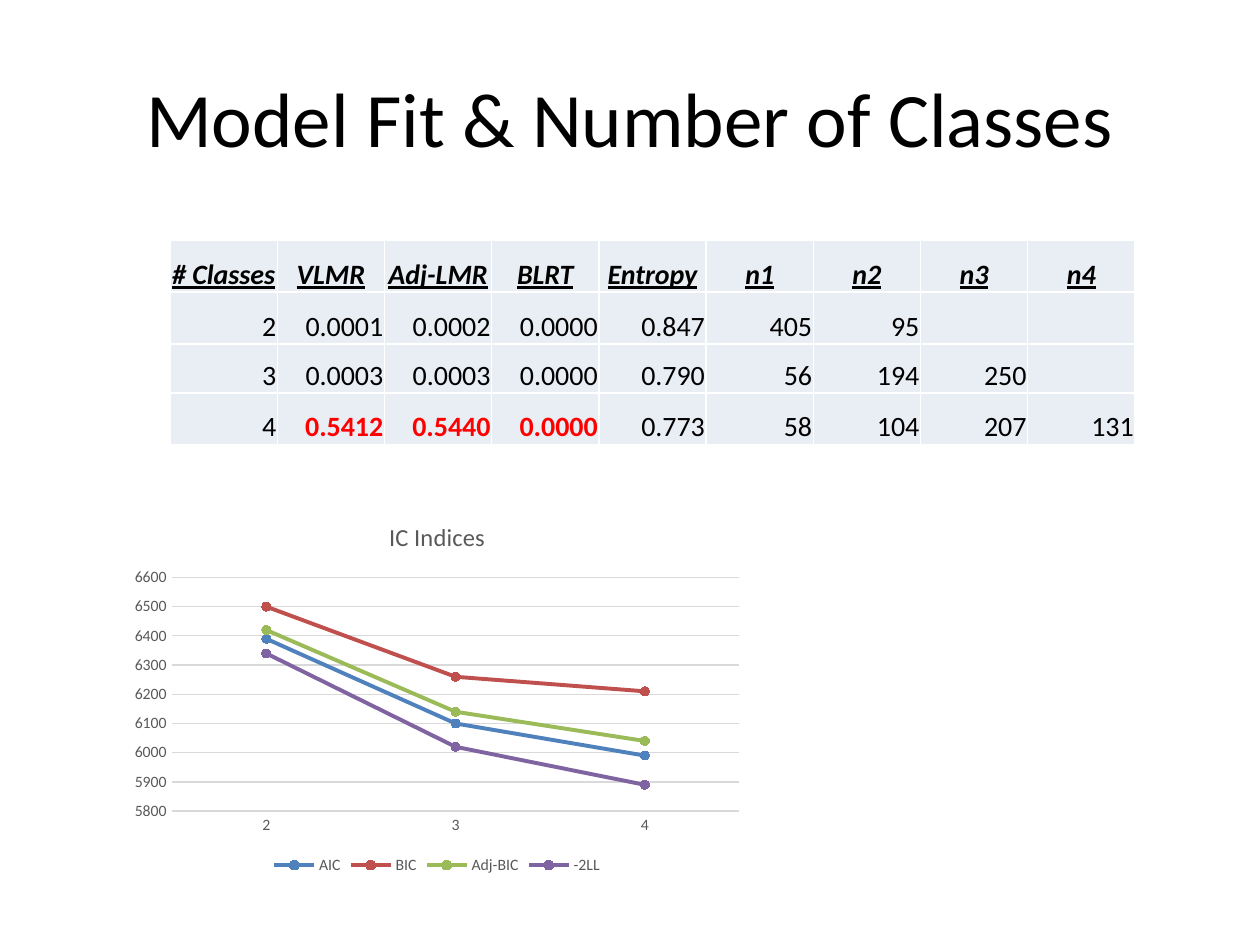
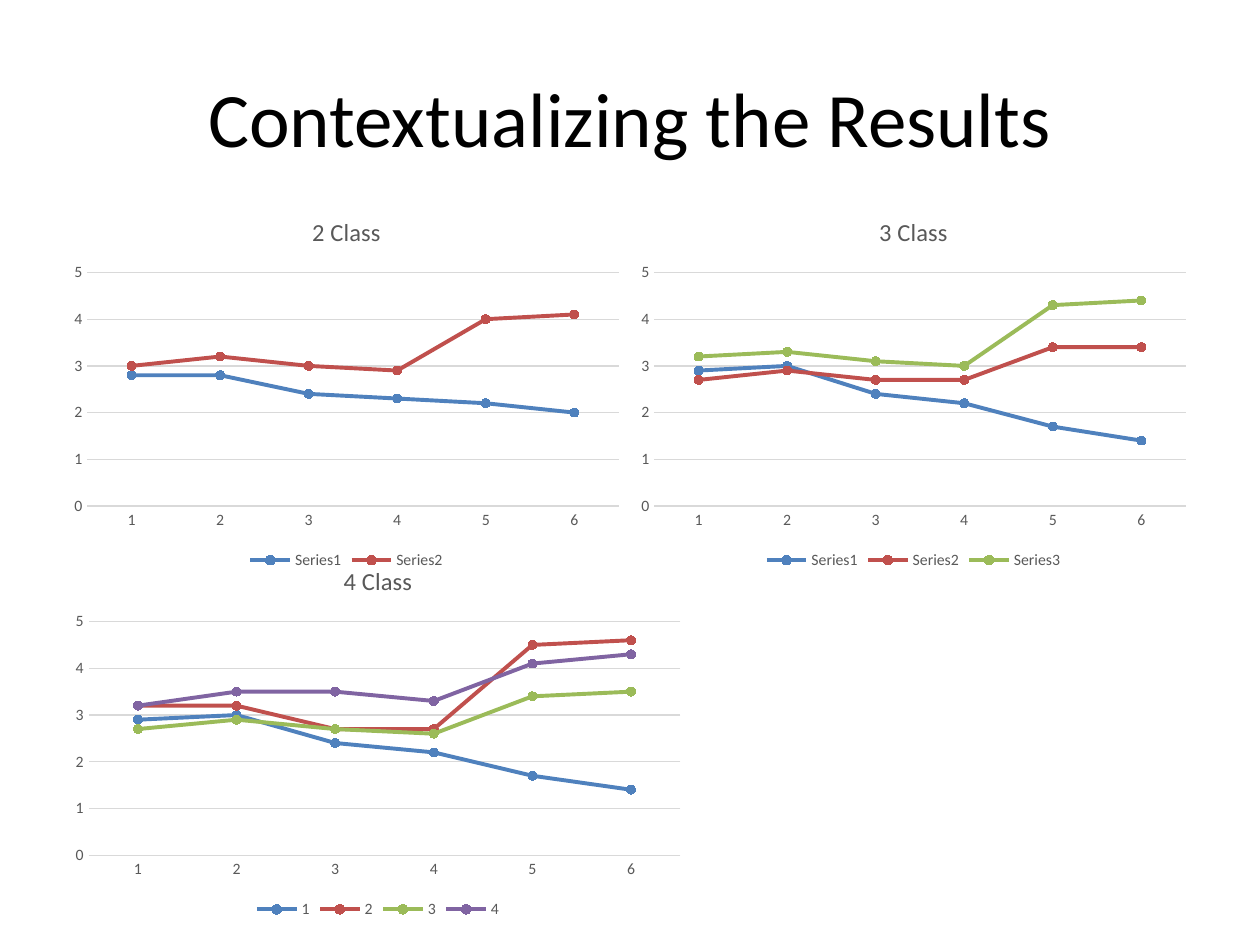
from dataclasses import dataclass

from lxml import etree
from pptx import Presentation
from pptx.chart.data import CategoryChartData
from pptx.dml.color import RGBColor
from pptx.enum.chart import XL_CHART_TYPE as ChartType
from pptx.enum.chart import XL_LEGEND_POSITION as LegendPosition
from pptx.enum.chart import XL_MARKER_STYLE as MarkerStyle
from pptx.enum.chart import XL_TICK_MARK as TickMark
from pptx.enum.text import MSO_ANCHOR as Anchor
from pptx.enum.text import PP_ALIGN as Align
from pptx.oxml import parse_xml
from pptx.oxml.ns import nsdecls
from pptx.util import Pt


@dataclass(frozen=True)
class Theme:
    font: str = "Calibri"
    ink: str = "000000"
    alert: str = "FF0000"
    cell: str = "E9EDF4"
    chart_text: str = "595959"
    grid: str = "D9D9D9"
    series: tuple = ("4F81BD", "C0504D", "9BBB59", "8064A2")
    title_size: int = 44
    table_size: int = 16
    chart_title_size: int = 14
    chart_size: int = 9


THEME = Theme()

FIT_HEADER = ["# Classes", "VLMR", "Adj-LMR", "BLRT", "Entropy", "n1", "n2", "n3", "n4"]
FIT_ROWS = [
    ["2", "0.0001", "0.0002", "0.0000", "0.847", "405", "95", "", ""],
    ["3", "0.0003", "0.0003", "0.0000", "0.790", "56", "194", "250", ""],
    ["4", "0.5412", "0.5440", "0.0000", "0.773", "58", "104", "207", "131"],
]
ALERT_CELLS = {(3, 1), (3, 2), (3, 3)}
FIT_BOX = (97.2, 137.5, 551.5, 116)
FIT_ROW_HEIGHTS = (29.5, 29.5, 28, 29.5)

ITEMS = ["1", "2", "3", "4", "5", "6"]
MEAN_SCALE = (0, 5, 1)

IC_CHART = {
    "title": "IC Indices", "box": (69.8, 286.6, 360, 216),
    "categories": ["2", "3", "4"], "scale": (5800, 6600, 100),
    "series": {
        "AIC": [6390, 6100, 5990],
        "BIC": [6500, 6260, 6210],
        "Adj-BIC": [6420, 6140, 6040],
        "-2LL": [6340, 6020, 5890],
    },
}

CLASS_CHARTS = [
    {
        "title": "2 Class", "box": (36, 112.3, 324, 216),
        "categories": ITEMS, "scale": MEAN_SCALE,
        "series": {
            "Series1": [2.8, 2.8, 2.4, 2.3, 2.2, 2],
            "Series2": [3, 3.2, 3, 2.9, 4, 4.1],
        },
    },
    {
        "title": "3 Class", "box": (360, 112.3, 324, 216),
        "categories": ITEMS, "scale": MEAN_SCALE,
        "series": {
            "Series1": [2.9, 3, 2.4, 2.2, 1.7, 1.4],
            "Series2": [2.7, 2.9, 2.7, 2.7, 3.4, 3.4],
            "Series3": [3.2, 3.3, 3.1, 3, 4.3, 4.4],
        },
    },
    {
        "title": "4 Class", "box": (36, 311.8, 360, 216),
        "categories": ITEMS, "scale": MEAN_SCALE,
        "series": {
            "1": [2.9, 3, 2.4, 2.2, 1.7, 1.4],
            "2": [3.2, 3.2, 2.7, 2.7, 4.5, 4.6],
            "3": [2.7, 2.9, 2.7, 2.6, 3.4, 3.5],
            "4": [3.2, 3.5, 3.5, 3.3, 4.1, 4.3],
        },
    },
]


def rgb(value):
    return RGBColor.from_string(value)


def style_font(font, size, color, bold=False):
    font.name = THEME.font
    font.size = Pt(size)
    font.bold = bold
    font.color.rgb = rgb(color)


def add_titled_slide(deck, text):
    page = deck.slides.add_slide(deck.slide_layouts[5])
    title = page.shapes.title
    title.left, title.top, title.width, title.height = map(Pt, (36, 21.6, 648, 90))
    frame = title.text_frame
    frame.vertical_anchor = Anchor.MIDDLE
    para = frame.paragraphs[0]
    para.alignment = Align.CENTER
    span = para.add_run()
    span.text = text
    style_font(span.font, THEME.title_size, THEME.ink)
    return page


def fill_cell(cell, text, is_header, is_alert):
    cell.fill.solid()
    cell.fill.fore_color.rgb = rgb(THEME.cell)
    cell.vertical_anchor = Anchor.BOTTOM
    cell.margin_left = cell.margin_right = cell.margin_top = Pt(0.7)
    cell.margin_bottom = Pt(0)
    if not text:
        return
    para = cell.text_frame.paragraphs[0]
    para.alignment = Align.CENTER if is_header else Align.RIGHT
    span = para.add_run()
    span.text = text
    color = THEME.alert if is_alert else THEME.ink
    style_font(span.font, THEME.table_size, color, is_header or is_alert)
    span.font.italic = span.font.underline = is_header


def add_fit_table(page):
    rows = [FIT_HEADER] + FIT_ROWS
    table = page.shapes.add_table(len(rows), len(FIT_HEADER), *map(Pt, FIT_BOX)).table
    table.first_row = table.horz_banding = False
    for column in table.columns:
        column.width = Pt(FIT_BOX[2] / len(FIT_HEADER))
    for r, (texts, height) in enumerate(zip(rows, FIT_ROW_HEIGHTS)):
        table.rows[r].height = Pt(height)
        for c, text in enumerate(texts):
            fill_cell(table.cell(r, c), text, r == 0, (r, c) in ALERT_CELLS)


def clear_chart_background(chart):
    """Let charts that overlap show through one another."""
    area = parse_xml(f'<c:spPr {nsdecls("c", "a")}><a:noFill/></c:spPr>')
    etree.SubElement(etree.SubElement(area, "{%s}ln" % area.nsmap["a"]),
                     "{%s}noFill" % area.nsmap["a"])
    chart.element.find("{*}chart").addnext(area)


def style_axes(chart, scale):
    for axis in (chart.category_axis, chart.value_axis):
        axis.major_tick_mark = axis.minor_tick_mark = TickMark.NONE
        style_font(axis.tick_labels.font, THEME.chart_size, THEME.chart_text)
    values = chart.value_axis
    values.minimum_scale, values.maximum_scale, values.major_unit = scale
    values.tick_labels.number_format = "0"
    values.tick_labels.number_format_is_linked = False
    values.format.line.fill.background()
    values.has_major_gridlines = True
    for line in (values.major_gridlines.format.line, chart.category_axis.format.line):
        line.color.rgb = rgb(THEME.grid)
        line.width = Pt(0.75)


def style_series(series, color):
    series.smooth = False
    series.format.line.color.rgb = color
    series.format.line.width = Pt(2.25)
    marker = series.marker
    marker.style = MarkerStyle.CIRCLE
    marker.size = 5
    marker.format.fill.solid()
    marker.format.fill.fore_color.rgb = color
    marker.format.line.color.rgb = color


def add_line_chart(page, content):
    data = CategoryChartData()
    data.categories = content["categories"]
    for name, values in content["series"].items():
        data.add_series(name, values)
    box = map(Pt, content["box"])
    chart = page.shapes.add_chart(ChartType.LINE_MARKERS, *box, data).chart
    style_font(chart.font, 10, THEME.ink)
    clear_chart_background(chart)

    chart.has_title = True
    span = chart.chart_title.text_frame.paragraphs[0].add_run()
    span.text = content["title"]
    style_font(span.font, THEME.chart_title_size, THEME.chart_text)
    chart.chart_title.include_in_layout = False

    chart.has_legend = True
    chart.legend.position = LegendPosition.BOTTOM
    chart.legend.include_in_layout = False
    style_font(chart.legend.font, THEME.chart_size, THEME.chart_text)

    style_axes(chart, content["scale"])
    chart.plots[0].vary_by_categories = False
    for series, color in zip(chart.plots[0].series, THEME.series):
        style_series(series, rgb(color))


def main():
    deck = Presentation()
    deck.slide_width, deck.slide_height = Pt(720), Pt(540)

    fit_page = add_titled_slide(deck, "Model Fit & Number of Classes")
    add_line_chart(fit_page, IC_CHART)
    add_fit_table(fit_page)

    results_page = add_titled_slide(deck, "Contextualizing the Results")
    for content in CLASS_CHARTS:
        add_line_chart(results_page, content)

    deck.save("out.pptx")


if __name__ == "__main__":
    main()
